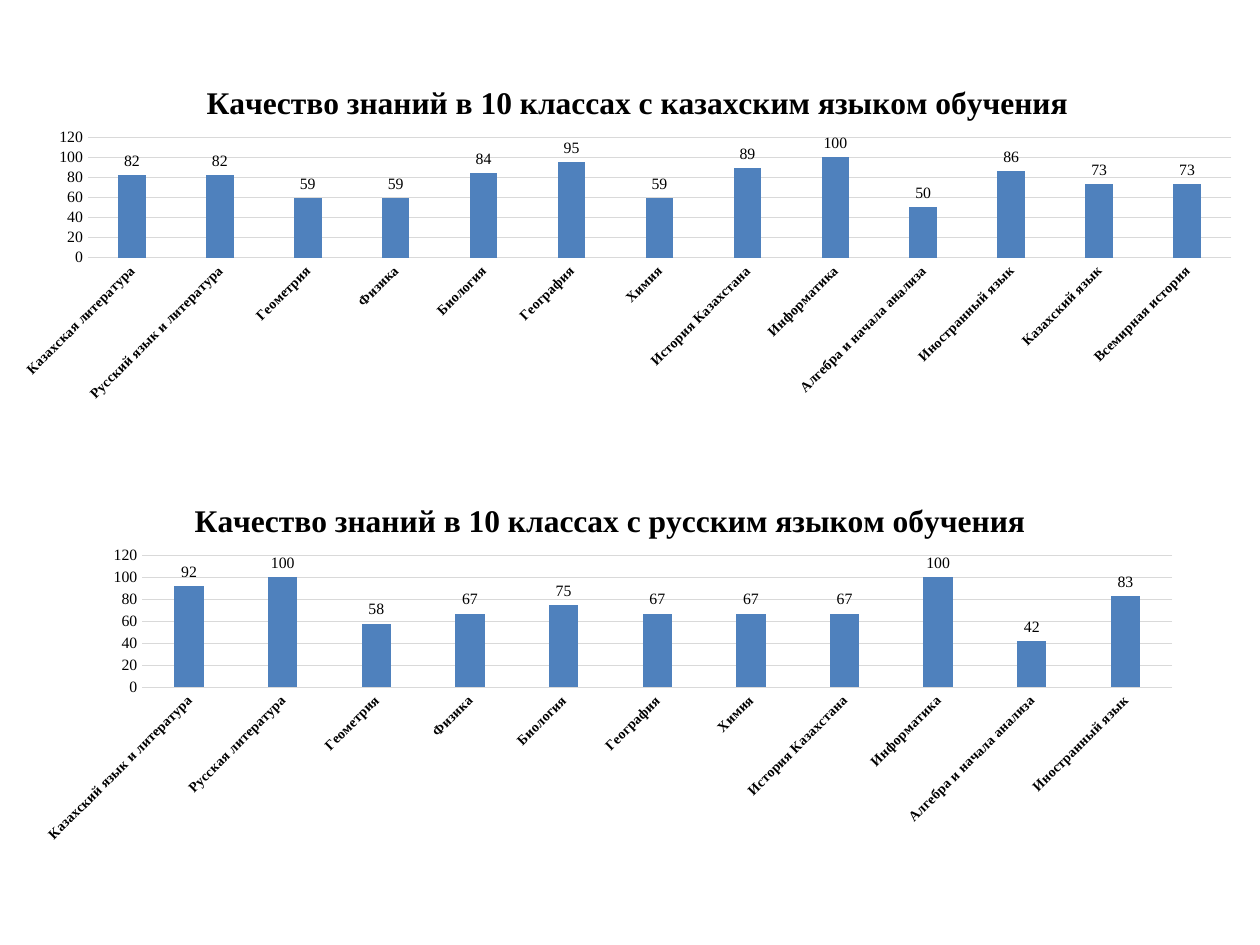
from lxml import etree
from pptx import Presentation
from pptx.chart.data import CategoryChartData
from pptx.dml.color import RGBColor
from pptx.enum.chart import XL_CHART_TYPE, XL_LABEL_POSITION, XL_TICK_MARK
from pptx.oxml.ns import qn
from pptx.util import Inches, Pt

FACE = "Times New Roman"
INK, GRID, BAR = "000000", "D9D9D9", "4F81BD"
hue = RGBColor.from_string


def write(frame, text, size=18, bold=False, color=INK):
    run = frame.paragraphs[0].add_run()
    run.text = text
    font = run.font
    font.name, font.size, font.bold = FACE, Pt(size), bold
    font.color.rgb = hue(color)


def place(part, index, **shares):
    """Put a chart part at the given shares of the chart's size."""
    for old in part.findall(qn("c:layout")):
        part.remove(old)
    layout = etree.Element(qn("c:layout"))
    manual = etree.SubElement(layout, qn("c:manualLayout"))
    if "w" in shares:
        etree.SubElement(manual, qn("c:layoutTarget"), val="inner")
    for side in "xy":
        etree.SubElement(manual, qn(f"c:{side}Mode"), val="edge")
    for key, share in shares.items():
        etree.SubElement(manual, qn(f"c:{key}"), val=str(share))
    part.insert(index, layout)


deck = Presentation()
deck.slide_width, deck.slide_height = Inches(10), Inches(7.5)
slide = deck.slides.add_slide(deck.slide_layouts[6])

# Grid of ten columns and ten rows
col, row = deck.slide_width / 10, deck.slide_height / 10

# Title, box in columns and rows, title and plot as shares, marks by subject
charts = [
    ("Качество знаний в 10 классах с русским языком обучения",
     (0.2, 5, 9.29, 3.99),
     dict(x=0.14, y=0.06), dict(x=0.1, y=0.22, w=0.88, h=0.35),
     {"Казахский язык и литература": 92, "Русская литература": 100,
      "Геометрия": 58, "Физика": 67, "Биология": 75, "География": 67,
      "Химия": 67, "История Казахстана": 67, "Информатика": 100,
      "Алгебра и начала анализа": 42, "Иностранный язык": 83}),
    ("Качество знаний в 10 классах с казахским языком обучения",
     (0, 0.59, 9.97, 3.75),
     dict(x=0.16, y=0.06), dict(x=0.07, y=0.23, w=0.91, h=0.34),
     {"Казахская литература": 82, "Русский язык и литература": 82,
      "Геометрия": 59, "Физика": 59, "Биология": 84, "География": 95,
      "Химия": 59, "История Казахстана": 89, "Информатика": 100,
      "Алгебра и начала анализа": 50, "Иностранный язык": 86,
      "Казахский язык": 73, "Всемирная история": 73}),
]

for title, (left, top, wide, high), head, area, marks in charts:
    data = CategoryChartData(number_format="0")
    data.categories = list(marks)
    data.add_series("Series 1", list(marks.values()))
    chart = slide.shapes.add_chart(
        XL_CHART_TYPE.COLUMN_CLUSTERED, int(left * col), int(top * row),
        int(wide * col), int(high * row), data).chart
    chart.has_legend = False
    chart.font.name, chart.font.size = FACE, Pt(10)
    chart.font.color.rgb = hue(INK)

    # Title and plot area
    chart.has_title = True
    write(chart.chart_title.text_frame, title, bold=True)
    chart.chart_title.include_in_layout = False
    root = chart.element if hasattr(chart, "element") else chart._chartSpace
    place(root.find(".//" + qn("c:title")), 1, **head)
    place(root.find(".//" + qn("c:plotArea")), 0, **area)

    # Bars and their values
    plot = chart.plots[0]
    plot.gap_width, plot.overlap = 219, -27
    plot.vary_by_categories = False
    fill = plot.series[0].format.fill
    fill.solid()
    fill.fore_color.rgb = hue(BAR)
    plot.has_data_labels = True
    labels = plot.data_labels
    labels.show_value = True
    labels.position = XL_LABEL_POSITION.OUTSIDE_END
    labels.number_format, labels.number_format_is_linked = "0", False

    # Axes
    names, scale = chart.category_axis, chart.value_axis
    for part, size, bold in ((names.tick_labels, 8, True),
                             (scale.tick_labels, 9, False),
                             (labels, 9, False)):
        font = part.font
        font.name, font.size, font.bold = FACE, Pt(size), bold
        font.color.rgb = hue(INK)
    for axis in (names, scale):
        axis.major_tick_mark = axis.minor_tick_mark = XL_TICK_MARK.NONE
    scale.minimum_scale, scale.maximum_scale, scale.major_unit = 0, 120, 20
    scale.tick_labels.number_format = "0"
    scale.tick_labels.number_format_is_linked = False
    scale.format.line.fill.background()
    for line in (names.format.line, scale.major_gridlines.format.line):
        line.color.rgb, line.width = hue(GRID), Pt(0.75)

    # Subject names slant upwards by 45 degrees
    body = root.find(".//" + qn("c:catAx")).find(
        qn("c:txPr") + "/" + qn("a:bodyPr"))
    body.set("rot", str(-45 * 60000))
    body.set("vert", "horz")

deck.save("out.pptx")
